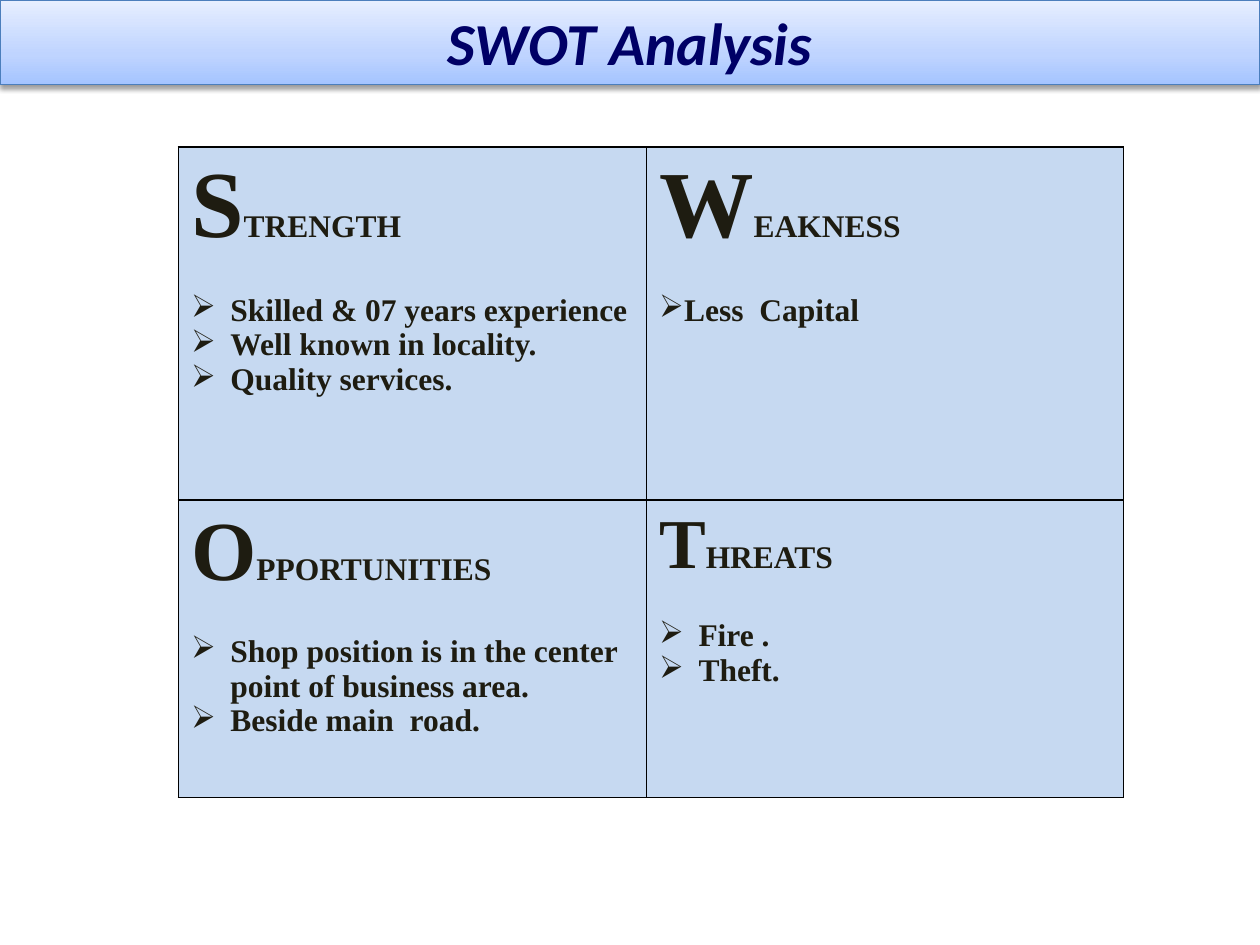
from lxml import etree
from pptx import Presentation
from pptx.dml.color import RGBColor
from pptx.enum import text
from pptx.oxml import ns
from pptx.util import Pt

COLORS = {
    "title": "000066", "title_line": "4B7EBC", "cell": "C6D9F1",
    "ink": "1E1C11", "border": "000000",
    "deep": "A4C4FF", "mid": "BFD4FF", "pale": "E6EEFF",
}
HANGING = 22.5

# Initial, its size, rest of the heading, bullet indent, points
QUADRANTS = [
    [("S", 54, "TRENGTH", HANGING,
      ["Skilled & 07 years experience", "Well known in locality.",
       "Quality services."]),
     ("W", 54, "EAKNESS", 0, ["Less  Capital"])],
    [("O", 48, "PPORTUNITIES", HANGING,
      ["Shop position is in the center point of business area.",
       "Beside main  road."]),
     ("T", 40, "HREATS", HANGING, ["Fire .", "Theft."])],
]


def add_xml(parent, tag, **attributes):
    return etree.SubElement(parent, ns.qn(tag), attributes)


class SwotSlide:
    body_font = "Times New Roman"
    body_size = 18

    def __init__(self, deck):
        self.slide = deck.slides.add_slide(deck.slide_layouts[5])

    def color(self, name):
        return RGBColor.from_string(COLORS[name])

    def style(self, font, name, size, color):
        font.name, font.size, font.bold = name, Pt(size), True
        font.color.rgb = self.color(color)

    def title(self, words, height):
        banner = self.slide.shapes.title
        banner.left, banner.top = Pt(0), Pt(0)
        banner.width, banner.height = Pt(720), Pt(height)

        # Three-stop gradient, palest at the top
        banner.fill.gradient()
        banner.fill.gradient_angle = 90
        properties = banner.element.spPr
        stops = properties.find(".//" + ns.qn("a:gsLst"))
        for stop in list(stops):
            stops.remove(stop)
        for position, name in ((0, "deep"), (35, "mid"), (100, "pale")):
            stop = add_xml(stops, "a:gs", pos=str(position * 1000))
            add_xml(stop, "a:srgbClr", val=COLORS[name])
        banner.line.color.rgb = self.color("title_line")
        banner.line.width = Pt(0.75)

        # Soft shadow below the banner
        effects = add_xml(properties, "a:effectLst")
        shadow = add_xml(effects, "a:outerShdw", blurRad=str(Pt(3.1)),
                         dist=str(Pt(1.6)), dir="5400000", rotWithShape="0")
        black = add_xml(shadow, "a:srgbClr", val=COLORS["border"])
        add_xml(black, "a:alpha", val="38000")

        frame = banner.text_frame
        frame.text = words
        frame.auto_size = text.MSO_AUTO_SIZE.NONE
        frame.vertical_anchor = text.MSO_ANCHOR.MIDDLE
        heading = frame.paragraphs[0]
        heading.alignment = text.PP_ALIGN.CENTER
        self.style(heading.font, "Calibri", 34, "title")
        heading.font.italic = True

    def table(self, left, top, widths, heights, content):
        grid = self.slide.shapes.add_table(
            len(heights), len(widths), Pt(left), Pt(top),
            Pt(sum(widths)), Pt(sum(heights))).table
        for column, width in zip(grid.columns, widths):
            column.width = Pt(width)
        for row, height, quadrants in zip(grid.rows, heights, content):
            row.height = Pt(height)
            for cell, quadrant in zip(row.cells, quadrants):
                self.quadrant(cell, *quadrant)

    def quadrant(self, cell, initial, size, rest, indent, points):
        # Borders go before the fill in the cell properties
        properties = cell._tc.get_or_add_tcPr()
        for side in ("a:lnL", "a:lnR", "a:lnT", "a:lnB"):
            line = add_xml(properties, side, w=str(Pt(1)))
            add_xml(add_xml(line, "a:solidFill"), "a:srgbClr",
                    val=COLORS["border"])
        cell.fill.solid()
        cell.fill.fore_color.rgb = self.color("cell")

        # Heading with a large initial
        heading = cell.text_frame.paragraphs[0]
        for letters, points_size in ((initial, size), (rest, self.body_size)):
            run = heading.add_run()
            run.text = letters
            self.style(run.font, self.body_font, points_size, "ink")

        # Bulleted points
        for number, words in enumerate(points):
            item = cell.text_frame.add_paragraph()
            item.text = words
            layout = item._p.get_or_add_pPr()
            layout.set("marL", str(Pt(indent)))
            layout.set("indent", str(-Pt(indent)))
            add_xml(layout, "a:buChar", char="➢")
            if number == 0:
                item.space_before = Pt(20)
            self.style(item.font, self.body_font, self.body_size, "ink")


def main():
    deck = Presentation()
    deck.slide_width, deck.slide_height = Pt(720), Pt(540)
    swot = SwotSlide(deck)
    swot.table(102, 84, (267.5, 272.5), (201.6, 170), QUADRANTS)
    swot.title("SWOT Analysis", 48.24)
    deck.save("out.pptx")


if __name__ == "__main__":
    main()
